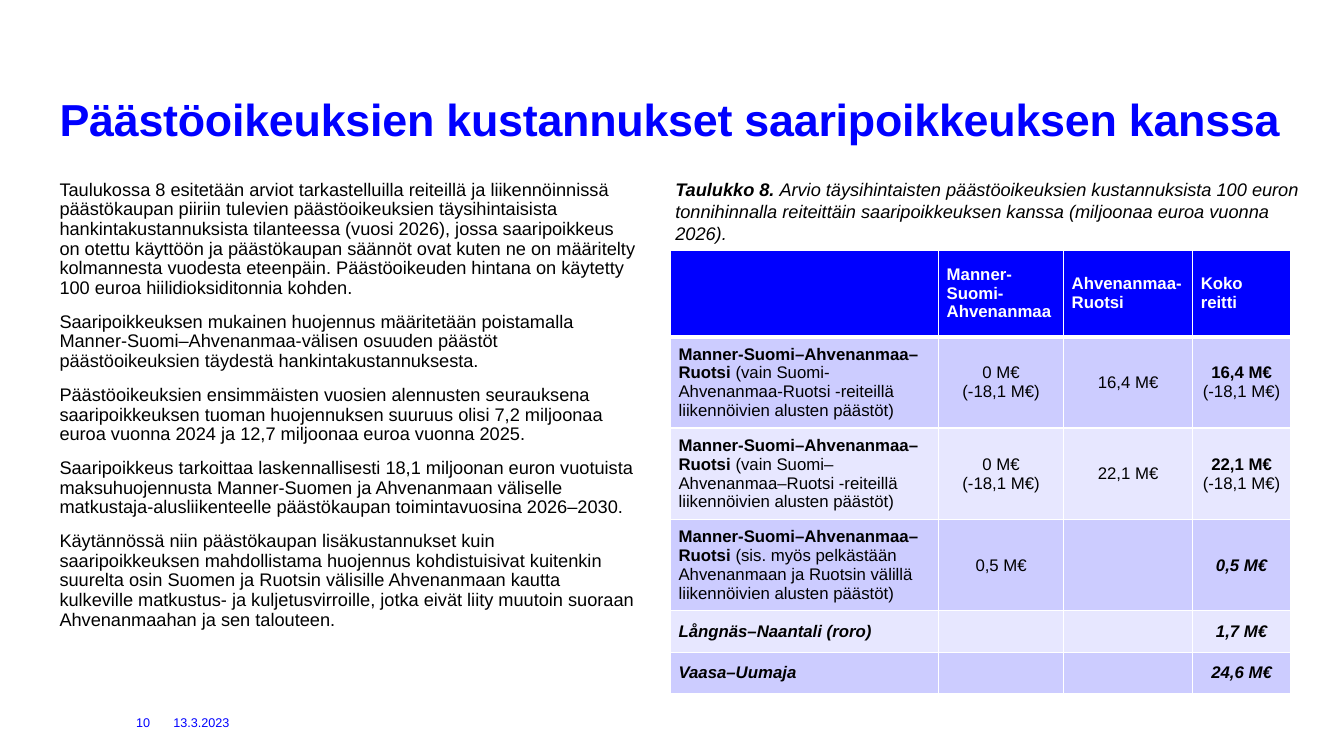
from dataclasses import dataclass

from lxml import etree
from pptx import Presentation
from pptx.dml.color import RGBColor
from pptx.enum.text import MSO_ANCHOR, MSO_AUTO_SIZE, PP_ALIGN
from pptx.oxml.ns import qn
from pptx.util import Inches, Pt

TOP, MIDDLE, BOTTOM = MSO_ANCHOR.TOP, MSO_ANCHOR.MIDDLE, MSO_ANCHOR.BOTTOM
LEFT, CENTER = PP_ALIGN.LEFT, PP_ALIGN.CENTER
NO_FIT = MSO_AUTO_SIZE.NONE


@dataclass(frozen=True)
class Theme:
    font: str = "Arial"
    blue: str = "0000FF"
    black: str = "000000"
    white: str = "FFFFFF"
    dark_band: str = "CCCCFF"
    light_band: str = "E7E7FF"
    title: float = 32
    body: float = 13
    table: float = 12
    footer: float = 9


THEME = Theme()


@dataclass(frozen=True)
class Span:
    text: str
    bold: bool = False
    italic: bool = False


@dataclass(frozen=True)
class Area:
    left: float
    top: float
    width: float
    height: float

    def lengths(self) -> tuple:
        return tuple(Inches(n) for n in (self.left, self.top, self.width, self.height))


@dataclass(frozen=True)
class FooterItem:
    text: str
    area: Area


Line = tuple[Span, ...]
Cell = tuple[Line, ...]

TITLE = "Päästöoikeuksien kustannukset saaripoikkeuksen kanssa"
BODY = (
    "Taulukossa 8 esitetään arviot tarkastelluilla reiteillä ja liikennöinnissä päästökaupan piiriin tulevien "
    "päästöoikeuksien täysihintaisista hankintakustannuksista tilanteessa (vuosi 2026), jossa saaripoikkeus on "
    "otettu käyttöön ja päästökaupan säännöt ovat kuten ne on määritelty kolmannesta vuodesta eteenpäin. "
    "Päästöoikeuden hintana on käytetty 100 euroa hiilidioksiditonnia kohden.",
    "Saaripoikkeuksen mukainen huojennus määritetään poistamalla Manner-Suomi–Ahvenanmaa-välisen osuuden "
    "päästöt päästöoikeuksien täydestä hankintakustannuksesta.",
    "Päästöoikeuksien ensimmäisten vuosien alennusten seurauksena saaripoikkeuksen tuoman huojennuksen suuruus "
    "olisi 7,2 miljoonaa euroa vuonna 2024 ja 12,7 miljoonaa euroa vuonna 2025.",
    "Saaripoikkeus tarkoittaa laskennallisesti 18,1 miljoonan euron vuotuista maksuhuojennusta Manner-Suomen ja "
    "Ahvenanmaan väliselle matkustaja-alusliikenteelle päästökaupan toimintavuosina 2026–2030.",
    "Käytännössä niin päästökaupan lisäkustannukset kuin saaripoikkeuksen mahdollistama huojennus kohdistuisivat "
    "kuitenkin suurelta osin Suomen ja Ruotsin välisille Ahvenanmaan kautta kulkeville matkustus- ja "
    "kuljetusvirroille, jotka eivät liity muutoin suoraan Ahvenanmaahan ja sen talouteen.",
)
CAPTION: Line = (
    Span("Taulukko 8. ", True, True),
    Span("Arvio täysihintaisten päästöoikeuksien kustannuksista 100 euron tonnihinnalla reiteittäin "
         "saaripoikkeuksen kanssa (miljoonaa euroa vuonna 2026).", italic=True),
)
FOOTER = (
    FooterItem("10", Area(1.35, 7.07, 0.35, 0.2)),
    FooterItem("13.3.2023", Area(1.72, 7.07, 0.8, 0.2)),
)


def cell(*texts: str, bold: bool = False, italic: bool = False) -> Cell:
    return tuple((Span(text, bold, italic),) for text in texts)


def route(note: str) -> Cell:
    return ((Span("Manner-Suomi–Ahvenanmaa–Ruotsi ", True), Span(note)),)


def total(amount: str) -> Cell:
    return ((Span(amount, True),), (Span(RELIEF),))


RELIEF = "(-18,1 M€)"
EMPTY: Cell = ((),)
STRONG = {"bold": True, "italic": True}
COLUMNS = (2.66, 1.24, 1.28, 0.97)
ROW_HEIGHTS = (0.86, 0.9, 0.9, 0.9, 0.41, 0.41)
ROWS: tuple[tuple[Cell, ...], ...] = (
    (EMPTY, cell("Manner-Suomi-Ahvenanmaa", bold=True), cell("Ahvenanmaa-Ruotsi", bold=True),
     cell("Koko reitti", bold=True)),
    (route("(vain Suomi-Ahvenanmaa-Ruotsi -reiteillä liikennöivien alusten päästöt)"),
     cell("0 M€", RELIEF), cell("16,4 M€"), total("16,4 M€")),
    (route("(vain Suomi–Ahvenanmaa–Ruotsi -reiteillä liikennöivien alusten päästöt)"),
     cell("0 M€", RELIEF), cell("22,1 M€"), total("22,1 M€")),
    (route("(sis. myös pelkästään Ahvenanmaan ja Ruotsin välillä liikennöivien alusten päästöt)"),
     cell("0,5 M€"), EMPTY, cell("0,5 M€", **STRONG)),
    (cell("Långnäs–Naantali (roro)", **STRONG), EMPTY, EMPTY, cell("1,7 M€", **STRONG)),
    (cell("Vaasa–Uumaja", **STRONG), EMPTY, EMPTY, cell("24,6 M€", **STRONG)),
)


def write_line(para, line: Line, size: float, color: str) -> None:
    for span in line:
        run = para.add_run()
        run.text = span.text
        font = run.font
        font.name, font.size = THEME.font, Pt(size)
        font.bold, font.italic = span.bold, span.italic
        font.color.rgb = RGBColor.from_string(color)


def write_lines(frame, lines: Cell, size: float, color: str, align=LEFT) -> None:
    for index, line in enumerate(lines):
        para = frame.paragraphs[0] if index == 0 else frame.add_paragraph()
        para.alignment = align
        write_line(para, line, size, color)
        if not line:
            etree.SubElement(para._p, qn("a:endParaRPr"), sz=str(int(size * 100)))


def place(shape, area: Area, anchor, inset: bool = False):
    shape.left, shape.top, shape.width, shape.height = area.lengths()
    frame = shape.text_frame
    frame.word_wrap, frame.auto_size, frame.vertical_anchor = True, NO_FIT, anchor
    if not inset:
        frame.margin_left = frame.margin_right = frame.margin_top = frame.margin_bottom = 0
    return frame


def add_title(page) -> None:
    frame = place(page.shapes.title, Area(0.59, 0.39, 12.13, 1.06), BOTTOM)
    write_lines(frame, cell(TITLE, bold=True), THEME.title, THEME.blue)
    para = frame.paragraphs[0]
    para.line_spacing = 0.85
    para.runs[0].font._element.set("spc", "-20")


def add_body(page) -> None:
    frame = place(page.placeholders[1], Area(0.59, 1.79, 5.71, 4.82), TOP)
    write_lines(frame, cell(*BODY), THEME.body, THEME.black)
    for index, para in enumerate(frame.paragraphs):
        para.line_spacing = 0.9
        para.space_before = Pt(10 if index else 0)
        properties = para._p.get_or_add_pPr()
        properties.set("marL", "0")
        properties.set("indent", "0")
        etree.SubElement(properties, qn("a:buNone"))


def add_text(page, area: Area, line: Line, size: float, color: str, anchor=TOP, inset: bool = False) -> None:
    box = page.shapes.add_textbox(*area.lengths())
    write_lines(place(box, area, anchor, inset), (line,), size, color)


def add_border(box, side: str, points: float) -> None:
    border = etree.SubElement(box._tc.get_or_add_tcPr(), qn(f"a:ln{side}"), w=str(Pt(points)))
    fill = etree.SubElement(border, qn("a:solidFill"))
    etree.SubElement(fill, qn("a:srgbClr"), val=THEME.white)


def add_cost_table(page) -> None:
    area = Area(6.65, 2.48, sum(COLUMNS), sum(ROW_HEIGHTS))
    table = page.shapes.add_table(len(ROWS), len(COLUMNS), *area.lengths()).table
    table.horz_banding = False
    for column, width in zip(table.columns, COLUMNS):
        column.width = Inches(width)
    for r, (row, height) in enumerate(zip(ROWS, ROW_HEIGHTS)):
        table.rows[r].height = Inches(height)
        band = THEME.blue if r == 0 else THEME.dark_band if r % 2 else THEME.light_band
        widths = {"L": 1, "R": 1, "T": 3 if r == 1 else 1, "B": 3 if r == 0 else 1}
        for c, lines in enumerate(row):
            box = table.cell(r, c)
            for side, points in widths.items():
                add_border(box, side, points)
            box.fill.solid()
            box.fill.fore_color.rgb = RGBColor.from_string(band)
            box.margin_left = box.margin_right = box.margin_top = box.margin_bottom = Inches(0.08)
            box.vertical_anchor = MIDDLE
            write_lines(box.text_frame, lines, THEME.table, THEME.black if r else THEME.white,
                        CENTER if r and c else LEFT)


def main() -> None:
    deck = Presentation()
    deck.slide_width, deck.slide_height = Inches(13.33), Inches(7.5)
    page = deck.slides.add_slide(deck.slide_layouts[1])
    add_title(page)
    add_body(page)
    for item in FOOTER:
        add_text(page, item.area, (Span(item.text),), THEME.footer, THEME.blue, MIDDLE)
    add_cost_table(page)
    add_text(page, Area(6.6, 1.72, 6.47, 0.76), CAPTION, THEME.body, THEME.black, inset=True)
    deck.save("out.pptx")


if __name__ == "__main__":
    main()
